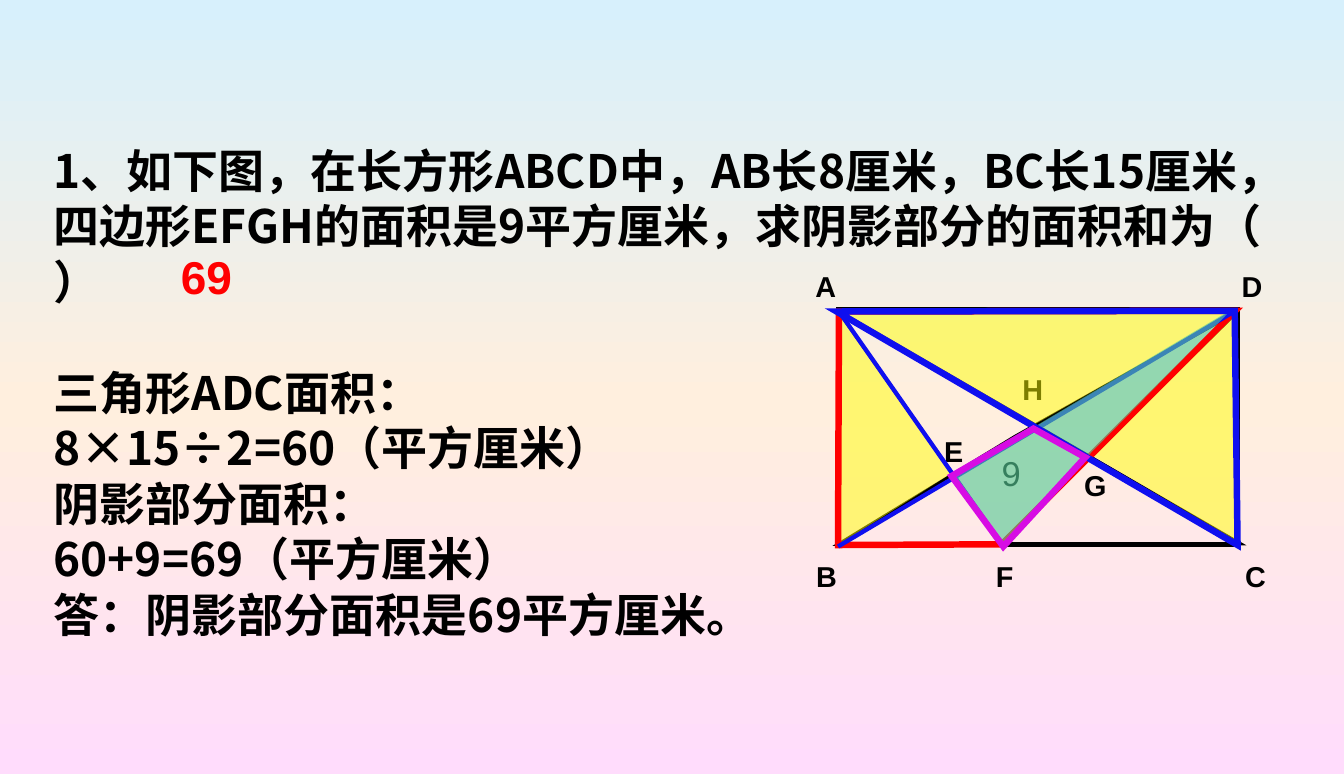
from dataclasses import dataclass

from lxml import etree
from pptx import Presentation
from pptx import util as u
from pptx.dml.color import RGBColor
from pptx.enum import shapes, text
from pptx.oxml import ns


@dataclass(frozen=True)
class Theme:
    ink: str = "000000"
    red: str = "FF0000"
    blue: str = "0F0FEF"
    pink: str = "D70CE4"
    gold: str = "FFFF00"
    green: str = "56CA95"
    sky: tuple = ((0, "D7F0FC"), (52, "FFEFDE"), (100, "FFDCFC"))
    sans: str = "Arial"
    han: str = "Noto Sans CJK SC"
    body: int = 32
    area: int = 24
    mark: int = 20
    pitch: float = 38.6
    thin: float = 2.25
    mid: float = 3
    bold: float = 4.5


T = Theme()
TASK = [
    "1、如下图，在长方形ABCD中，AB长8厘米，BC长15厘米，四边形EFGH的面积是9平方厘米，求阴影部分的面积和为（\t）",
    "三角形ADC面积：",
    "8×15÷2=60（平方厘米）",
    "阴影部分面积：",
    "60+9=69（平方厘米）",
    "答：阴影部分面积是69平方厘米。",
]

# Figure data: points measured from the corner of the rectangle
UNDER = [
    ([(0, 163.5), (123, 88.5), (278, 1.5), (112, 164)], T.ink, T.thin),
    ([(114, 163), (0, 1), (280, 163)], T.ink, T.thin),
]
SHADE = [
    [(0, 164), (0, 2), (79, 114)],
    [(0, 1), (278, 0), (137, 80)],
    [(176, 101), (277, 0), (277, 161)],
]
ABFD = [(0, 164), (0.7, 1.5), (276.5, 1), (114, 163.5)]
RAYS = [((276.5, 1), (0, 165)), ((0.7, 1.5), (114, 163.5))]
DEF = [(113, 164), (79, 116), (274, 0)]
ADC = [(-1, 1.5), (276, 1), (278, 164)]
EFGH = [(79, 116), (136, 83), (172, 103), (115, 165)]
OUTER = {"A": (-8.5, -15.5), "D": (288, -15.5),
         "B": (-8, 186), "F": (116, 186), "C": (290.5, 186)}
INNER = {"E": (80.5, 99), "G": (179, 122.5), "H": (135.5, 56)}


def rgb(tint):
    return RGBColor.from_string(tint)


def add(node, tag, **attrs):
    return etree.SubElement(node, ns.qn(tag), attrs)


def write(slide, box, lines, font=T.sans, size=T.mark, tint=T.ink, bold=True,
          align=text.PP_ALIGN.LEFT, pitch=None, gap=0, tab=None):
    """Add a text box; gap is the space before its second paragraph."""
    frame = slide.shapes.add_textbox(*map(u.Pt, box)).text_frame
    frame.word_wrap = True
    for i, line in enumerate(lines):
        para = frame.paragraphs[0] if i == 0 else frame.add_paragraph()
        if tab and "\t" in line:
            stops = add(para._p.get_or_add_pPr(), "a:tabLst")
            add(stops, "a:tab", pos=str(u.Pt(tab)), algn="l")
        para.alignment = align
        if pitch:
            para.line_spacing = u.Pt(pitch)
        if i == 1 and gap:
            para.space_before = u.Pt(gap)
        run = para.add_run()
        run.text = line
        face = run.font
        face.name, face.size, face.bold = font, u.Pt(size), bold
        face.color.rgb = rgb(tint)
        add(run._r.get_or_add_rPr(), "a:ea", typeface=font)


def style(shape, fill=None, line=None, width=0, alpha=100):
    shape.shadow.inherit = False
    if fill:
        shape.fill.solid()
        shape.fill.fore_color.rgb = rgb(fill)
        tone = shape.fill._xPr.find(".//" + ns.qn("a:srgbClr"))
        add(tone, "a:alpha", val=str(alpha * 1000))
    else:
        shape.fill.background()
    if line:
        shape.line.color.rgb = rgb(line)
        shape.line.width = u.Pt(width)
        add(shape.line._get_or_add_ln(), "a:miter", lim="800000")
    else:
        shape.line.fill.background()


def shift(box, spot):
    return u.Pt(box[0] + spot[0]), u.Pt(box[1] + spot[1])


def outline(slide, box, spots, **look):
    first, *rest = [shift(box, spot) for spot in spots]
    pen = slide.shapes.build_freeform(*first, scale=1.0)
    pen.add_line_segments(rest, close=True)
    style(pen.convert_to_shape(), **look)


def ray(slide, box, start, end):
    line = slide.shapes.add_connector(
        shapes.MSO_CONNECTOR.STRAIGHT, *shift(box, start), *shift(box, end))
    line.line.color.rgb = rgb(T.blue)
    line.line.width = u.Pt(T.mid)
    add(line._element.spPr, "a:effectLst")


def label(slide, box, name, spot, **look):
    wide, high = 38, 32
    place = (box[0] + spot[0] - wide / 2, box[1] + spot[1] - high / 2, wide, high)
    write(slide, place, [name], align=text.PP_ALIGN.CENTER, **look)


def backdrop(slide):
    fill = slide.background.fill
    fill.gradient()
    fill.gradient_angle = 270
    stops = slide.element.find(".//" + ns.qn("a:gsLst"))
    for stop in list(stops):
        stops.remove(stop)
    for place, tint in T.sky:
        add(add(stops, "a:gs", pos=str(place * 1000)), "a:srgbClr", val=tint)


def figure(slide, box):
    # Rectangle and its inner lines
    frame = slide.shapes.add_shape(
        shapes.MSO_SHAPE.RECTANGLE, *map(u.Pt, box))
    style(frame, line=T.ink, width=T.mid)
    for spots, tint, width in UNDER:
        outline(slide, box, spots, line=tint, width=width)

    # Labels, which lie below the shaded parts
    for name, spot in (OUTER | INNER).items():
        label(slide, box, name, spot)
    label(slide, box, "9", (120.5, 112), size=T.area, bold=False)

    # Shaded parts and coloured triangles
    for spots in SHADE:
        outline(slide, box, spots, fill=T.gold, alpha=49)
    outline(slide, box, ABFD, line=T.red, width=T.bold)
    for start, end in RAYS:
        ray(slide, box, start, end)
    outline(slide, box, DEF, fill=T.green, alpha=63)
    outline(slide, box, ADC, line=T.blue, width=T.bold)
    outline(slide, box, EFGH, line=T.pink, width=T.bold)


def problem(slide, box):
    write(slide, box, TASK, font=T.han, size=T.body,
          pitch=T.pitch, gap=T.pitch, tab=129)


def answer(slide, box):
    write(slide, box, ["69"], size=T.body, tint=T.red)


def main():
    deck = Presentation()
    deck.slide_width, deck.slide_height = u.Pt(935.3), u.Pt(538.6)
    slide = deck.slides.add_slide(deck.slide_layouts[6])
    backdrop(slide)
    problem(slide, (30.2, 95.4, 892, 356.4))
    figure(slide, (583.2, 215.3, 278, 164))
    answer(slide, (118.8, 169.2, 82.8, 46))
    deck.save("out.pptx")


if __name__ == "__main__":
    main()
